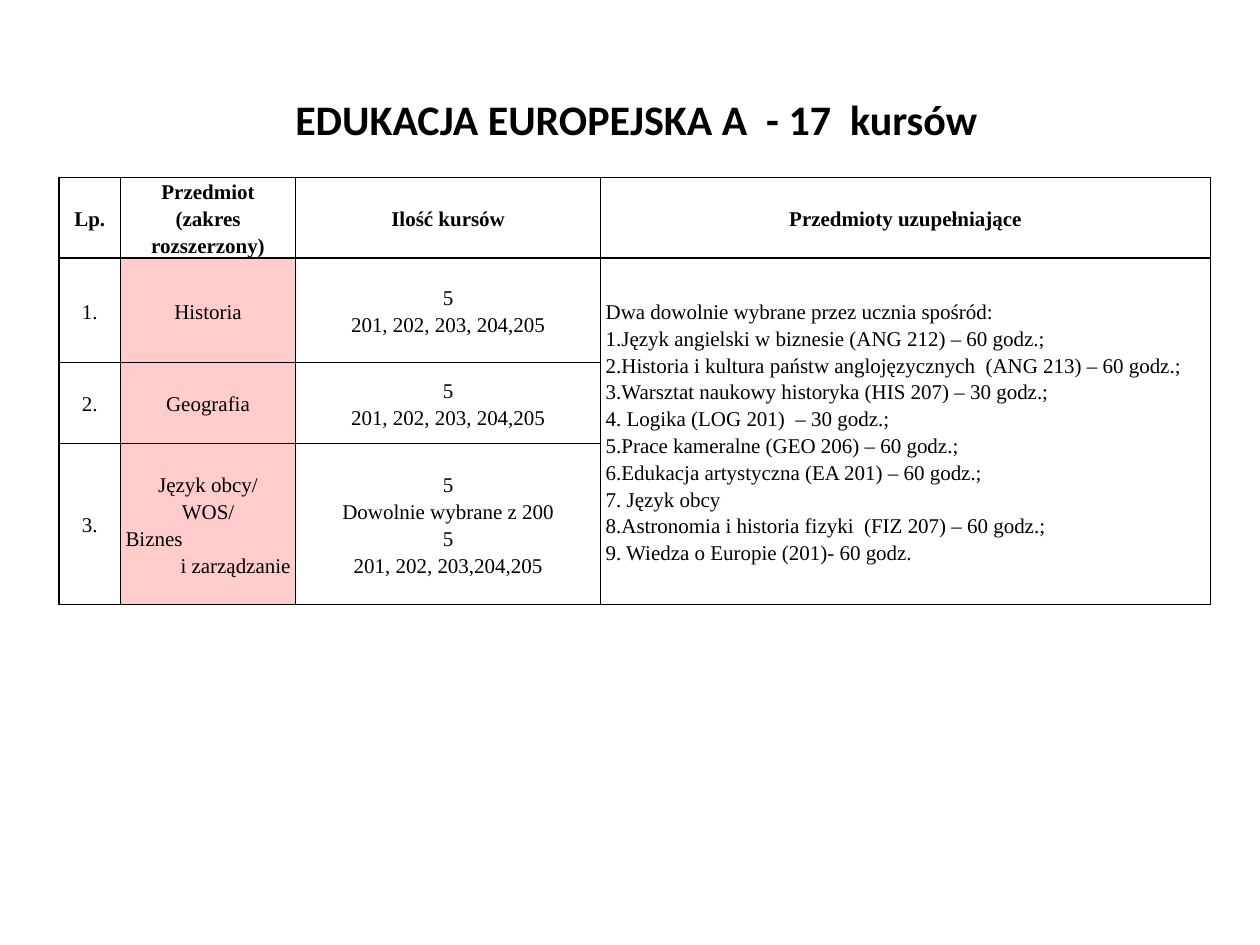
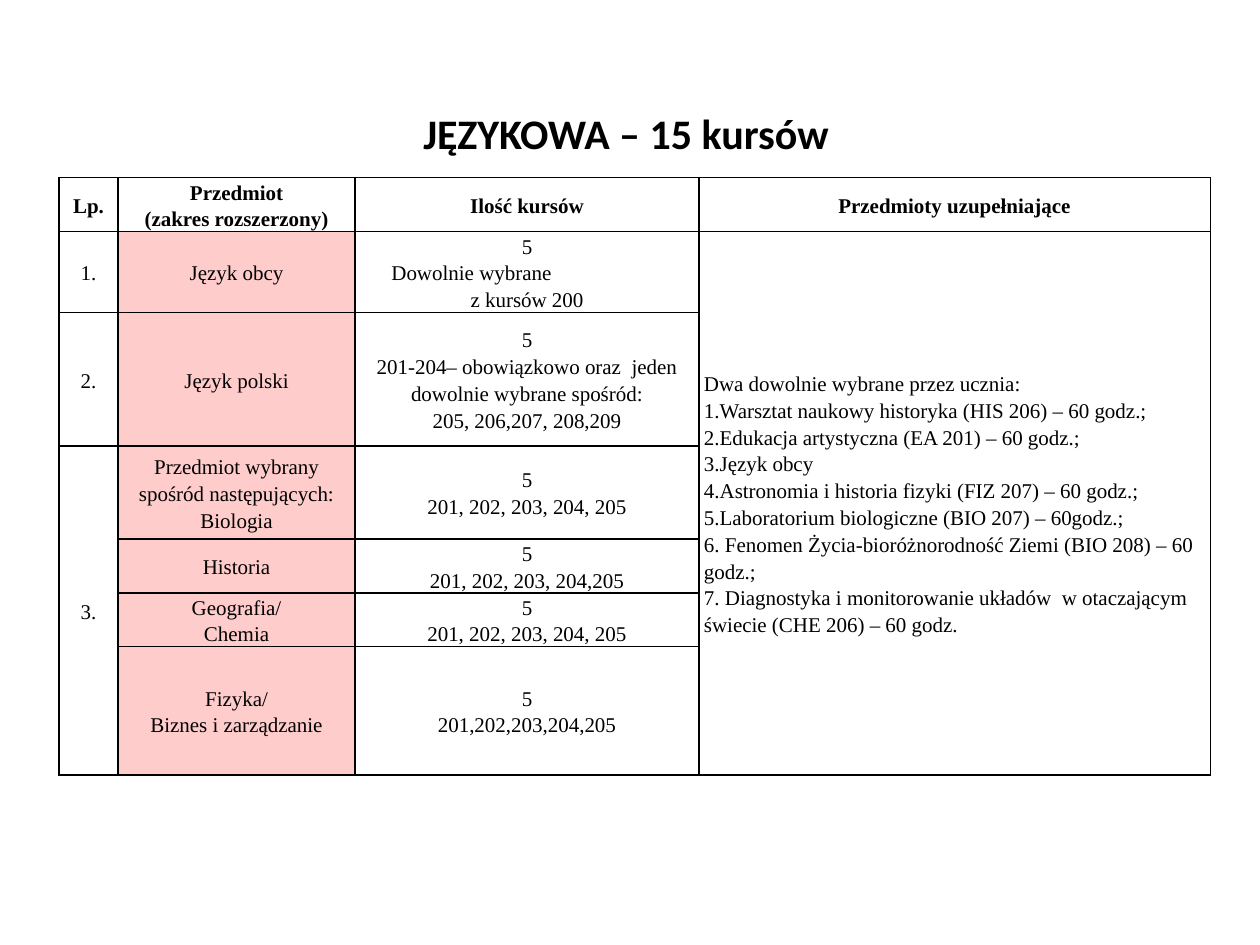
from dataclasses import dataclass

import lxml.etree
import pptx
import pptx.dml.color
import pptx.enum.text
import pptx.oxml.ns
import pptx.util
from pptx.util import Cm, Pt

RGBColor = pptx.dml.color.RGBColor
Align = pptx.enum.text.PP_ALIGN
Anchor = pptx.enum.text.MSO_ANCHOR


@dataclass(frozen=True)
class Theme:
    ink: str = "000000"
    paper: str = "FFFFFF"
    subject: str = "FFCCCC"
    title_font: str = "Calibri"
    table_font: str = "Times New Roman"
    title_size: int = 24
    table_size: int = 12
    border_width: int = 1
    line_spacing: float = 1.15


theme = Theme()
SUBJECT_COLUMN, ELECTIVE_COLUMN = 1, 3

# Alignment and left indent (cm) of the lines that are not centred.
LINE_LAYOUT = {
    "Biznes": (Align.LEFT, 0),
    "i zarządzanie": (Align.RIGHT, 0),
    "Dowolnie wybrane": (Align.LEFT, 0.63),
}

# None marks a cell covered by the one above it.
PROGRAMMES = [
    {
        "title": "EDUKACJA EUROPEJSKA A  - 17  kursów",
        "title_box": (1.4, 1.19, 22.86, 2.41),
        "columns": [1.24, 3.53, 6.15, 12.29],
        "rows": [1.47, 2.11, 1.63, 3.25],
        "courses": [
            ["1.", "Historia", "5\n201, 202, 203, 204,205",
             "Dwa dowolnie wybrane przez ucznia spośród:\n"
             "1.Język angielski w biznesie (ANG 212) – 60 godz.;\n"
             "2.Historia i kultura państw anglojęzycznych  (ANG 213) – 60 godz.;\n"
             "3.Warsztat naukowy historyka (HIS 207) – 30 godz.;\n"
             "4. Logika (LOG 201)  – 30 godz.;\n"
             "5.Prace kameralne (GEO 206) – 60 godz.;\n"
             "6.Edukacja artystyczna (EA 201) – 60 godz.;\n"
             "7. Język obcy\n"
             "8.Astronomia i historia fizyki  (FIZ 207) – 60 godz.;\n"
             "9. Wiedza o Europie (201)- 60 godz."],
            ["2.", "Geografia", "5\n201, 202, 203, 204,205", None],
            ["3.", "Język obcy/\nWOS/\nBiznes\ni zarządzanie",
             "5\nDowolnie wybrane z 200\n5\n201, 202, 203,204,205", None],
        ],
    },
    {
        "title": "JĘZYKOWA – 15 kursów",
        "title_box": (1.19, 1.57, 22.86, 2.21),
        "columns": [1.19, 4.78, 6.93, 10.31],
        "rows": [1.09, 1.63, 2.69, 1.88, 1.07, 1.04, 2.59],
        "courses": [
            ["1.", "Język obcy", "5\nDowolnie wybrane\nz kursów 200",
             "Dwa dowolnie wybrane przez ucznia:\n"
             "1.Warsztat naukowy historyka (HIS 206) – 60 godz.;\n"
             "2.Edukacja artystyczna (EA 201) – 60 godz.;\n"
             "3.Język obcy\n"
             "4.Astronomia i historia fizyki (FIZ 207) – 60 godz.;\n"
             "5.Laboratorium biologiczne (BIO 207) – 60godz.;\n"
             "6. Fenomen Życia-bioróżnorodność Ziemi (BIO 208) – 60 godz.;\n"
             "7. Diagnostyka i monitorowanie układów  w otaczającym świecie (CHE 206) – 60 godz."],
            ["2.", "Język polski",
             "5\n201-204– obowiązkowo oraz  jeden dowolnie wybrane spośród:\n"
             "205, 206,207, 208,209", None],
            ["3.", "Przedmiot wybrany spośród następujących:\nBiologia",
             "5\n201, 202, 203, 204, 205", None],
            [None, "Historia", "5\n201, 202, 203, 204,205", None],
            [None, "Geografia/\nChemia", "5\n201, 202, 203, 204, 205", None],
            [None, "Fizyka/\nBiznes i zarządzanie", "5\n201,202,203,204,205", None],
        ],
    },
]
HEADER = ["Lp.", "Przedmiot\n(zakres rozszerzony)", "Ilość kursów", "Przedmioty uzupełniające"]


def set_font(font, name, size, bold):
    font.name = name
    font.size = Pt(size)
    font.bold = bold
    font.color.rgb = RGBColor.from_string(theme.ink)


def frame_cell(cell, fill):
    """Give a cell its borders, margins and fill."""
    properties = cell._tc.get_or_add_tcPr()
    qualified = pptx.oxml.ns.qn
    for side in ("a:lnL", "a:lnR", "a:lnT", "a:lnB"):
        line = lxml.etree.SubElement(properties, qualified(side), w=str(Pt(theme.border_width)))
        solid = lxml.etree.SubElement(line, qualified("a:solidFill"))
        lxml.etree.SubElement(solid, qualified("a:srgbClr"), val=theme.ink)
    cell.margin_left = cell.margin_right = Cm(0.1)
    cell.margin_top = cell.margin_bottom = 0
    cell.vertical_anchor = Anchor.MIDDLE
    cell.fill.solid()
    cell.fill.fore_color.rgb = RGBColor.from_string(fill)


presentation = pptx.Presentation()
presentation.slide_width = Cm(25.4)
presentation.slide_height = Cm(19.05)

for programme in PROGRAMMES:
    slide = presentation.slides.add_slide(presentation.slide_layouts[5])
    title = slide.shapes.title
    title.left, title.top, title.width, title.height = map(Cm, programme["title_box"])
    title.text_frame.text = programme["title"]
    title.text_frame.vertical_anchor = Anchor.MIDDLE
    title.text_frame.paragraphs[0].alignment = Align.CENTER
    set_font(title.text_frame.paragraphs[0].runs[0].font, theme.title_font, theme.title_size, True)

    widths, heights = programme["columns"], programme["rows"]
    table = slide.shapes.add_table(len(heights), len(widths), Cm(1.19), Cm(3.58),
                                   Cm(sum(widths)), Cm(sum(heights))).table
    table.horz_banding = False
    for column, width in zip(table.columns, widths):
        column.width = Cm(width)
    for row, height in zip(table.rows, heights):
        row.height = Cm(height)

    grid = [HEADER] + programme["courses"]
    for row_index, texts in enumerate(grid):
        is_header = row_index == 0
        for column_index, text in enumerate(texts):
            cell = table.cell(row_index, column_index)
            is_subject = column_index == SUBJECT_COLUMN and not is_header
            is_elective = column_index == ELECTIVE_COLUMN and not is_header
            frame_cell(cell, theme.subject if is_subject else theme.paper)
            if text is None:
                continue
            cell.text_frame.text = text
            default_layout = (Align.LEFT if is_elective else Align.CENTER, 0)
            for paragraph in cell.text_frame.paragraphs:
                alignment, indent = LINE_LAYOUT.get(paragraph.text, default_layout)
                paragraph.alignment = alignment
                paragraph.line_spacing = theme.line_spacing
                if indent:
                    paragraph._p.get_or_add_pPr().set("marL", str(Cm(indent)))
                for run in paragraph.runs:
                    set_font(run.font, theme.table_font, theme.table_size, is_header)

    for column_index in range(len(widths)):
        starts = [index for index, texts in enumerate(grid) if texts[column_index] is not None]
        for start, following in zip(starts, starts[1:] + [len(grid)]):
            if following - start > 1:
                table.cell(start, column_index).merge(table.cell(following - 1, column_index))

presentation.save("out.pptx")
